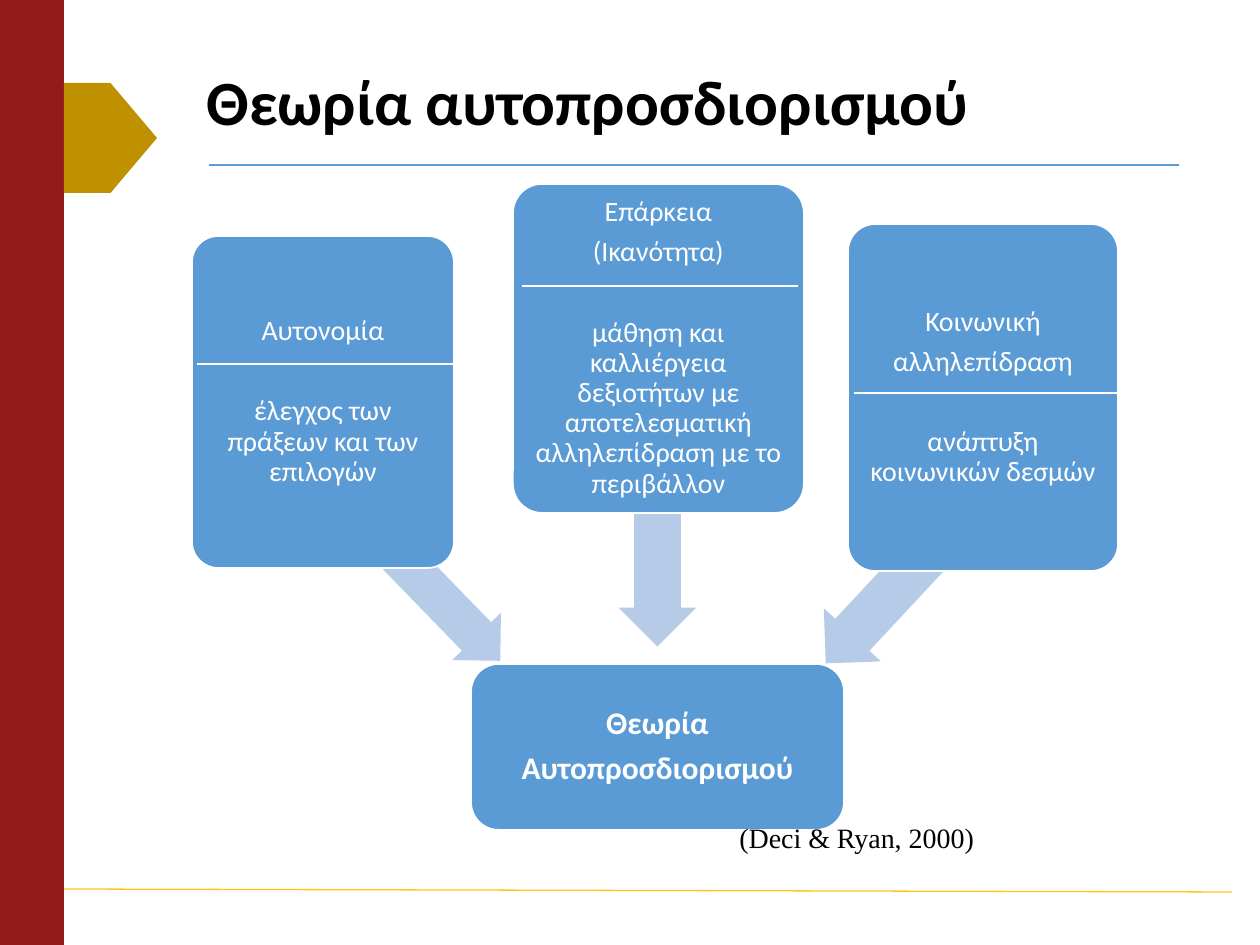
from dataclasses import dataclass

from lxml import etree
from pptx import Presentation, util as u
from pptx.dml.color import RGBColor
from pptx.enum import shapes, text
from pptx.oxml.ns import qn

EMU_PER_PX = 914400 / 126
COLORS = {
    "band": "931B1B", "tab": "BF9000", "blue": "5B9BD5", "arrow": "B5CBE7",
    "gold": "FFC61A", "white": "FFFFFF", "black": "000000",
}
Box = tuple[int, int, int, int]


@dataclass(frozen=True)
class Need:
    box: Box
    heading: tuple[str, ...]
    meaning: str
    arrow: Box
    rotation: float
    divider: tuple[int, int, int]  # x from, x to, y


NEEDS = [
    Need((192, 236, 262, 332), ("Αυτονομία",),
         "έλεγχος των πράξεων και των επιλογών",
         (328, 554, 203, 68), 225.8, (197, 473, 364)),
    Need((513, 184, 291, 329), ("Επάρκεια", "(Ικανότητα)"),
         "μάθηση και καλλιέργεια δεξιοτήτων με αποτελεσματική "
         "αλληλεπίδραση με το περιβάλλον",
         (509, 459, 297, 78), 270, (522, 798, 286)),
    Need((848, 224, 270, 347), ("Κοινωνική", "αλληλεπίδραση"),
         "ανάπτυξη κοινωνικών δεσμών",
         (770, 496, 351, 78), 313, (854, 1129, 393)),
]


def px(length: int) -> u.Emu:
    return u.Emu(round(length * EMU_PER_PX))


def color(name: str) -> RGBColor:
    return RGBColor.from_string(COLORS[name])


def add_block(slide, kind, box: Box, fill: str, outlined: bool = False):
    block = slide.shapes.add_shape(kind, *map(px, box))
    block.shadow.inherit = False
    block.fill.solid()
    block.fill.fore_color.rgb = color(fill)
    if outlined:
        block.line.color.rgb = color("white")
        block.line.width = u.Pt(1)
    else:
        block.line.fill.background()
    return block


def add_line(slide, start: tuple[int, int], end: tuple[int, int],
             tint: str, width: float) -> None:
    line = slide.shapes.add_connector(
        shapes.MSO_CONNECTOR.STRAIGHT, *map(px, start + end))
    line.line.color.rgb = color(tint)
    line.line.width = u.Pt(width)
    etree.SubElement(line._element.spPr, qn("a:effectLst"))


def write_centred(frame, lines: tuple[str, ...], size: int, inset: int,
                  bold: bool = False) -> None:
    frame.word_wrap = True
    frame.vertical_anchor = text.MSO_ANCHOR.MIDDLE
    frame.margin_left = frame.margin_right = px(inset)
    frame.margin_top = frame.margin_bottom = px(inset)
    for index, line in enumerate(lines):
        paragraph = frame.paragraphs[0] if index == 0 else frame.add_paragraph()
        paragraph.text = line
        paragraph.alignment = text.PP_ALIGN.CENTER
        paragraph.line_spacing = 0.9
        paragraph.space_after = u.Pt(size * 0.35)
        style_font(paragraph.font, "Calibri", size, "white", bold)


def style_font(font, name: str, size: int, tint: str, bold: bool = False) -> None:
    font.name = name
    font.size = u.Pt(size)
    font.bold = bold
    font.color.rgb = color(tint)


def add_label(slide, box: Box, words: str, name: str, size: int,
              bold: bool = False) -> None:
    frame = slide.shapes.add_textbox(*map(px, box)).text_frame
    frame.word_wrap = True
    frame.vertical_anchor = text.MSO_ANCHOR.MIDDLE
    paragraph = frame.paragraphs[0]
    paragraph.text = words
    paragraph.line_spacing = 0.9
    style_font(paragraph.font, name, size, "black", bold)


def add_need(slide, need: Need) -> None:
    """Draw one need: its arrow to the theory, its box and its text."""
    arrow = add_block(slide, shapes.MSO_SHAPE.LEFT_ARROW, need.arrow, "arrow")
    arrow.adjustments[0], arrow.adjustments[1] = 0.6, 0.5
    arrow.rotation = need.rotation
    card = add_block(slide, shapes.MSO_SHAPE.ROUNDED_RECTANGLE, need.box,
                     "blue", outlined=True)
    card.adjustments[0] = 0.1
    write_centred(card.text_frame, (*need.heading, need.meaning), 16, 4)
    card.text_frame.paragraphs[-1].space_before = u.Pt(23)


def main() -> None:
    prs = Presentation()
    prs.slide_width, prs.slide_height = px(1260), px(945)
    slide = prs.slides.add_slide(prs.slide_layouts[6])

    add_block(slide, shapes.MSO_SHAPE.RECTANGLE, (0, 0, 64, 945), "band")
    add_line(slide, (209, 165), (1179, 165), "blue", 0.75)
    add_line(slide, (64, 889), (1232, 892), "gold", 0.75)
    add_block(slide, shapes.MSO_SHAPE.PENTAGON, (64, 83, 93, 110), "tab")
    add_label(slide, (194, 52, 992, 106), "Θεωρία αυτοπροσδιορισμού",
              "Calibri", 36, bold=True)

    theory = add_block(slide, shapes.MSO_SHAPE.ROUNDED_RECTANGLE,
                       (471, 664, 373, 166), "blue", outlined=True)
    write_centred(theory.text_frame, ("Θεωρία", "Αυτοπροσδιορισμού"), 18, 1,
                  bold=True)
    for need in NEEDS:
        add_need(slide, need)
    for need in NEEDS:
        left, right, y = need.divider
        add_line(slide, (left, y), (right, y), "white", 1.5)

    add_label(slide, (727, 816, 306, 46), "(Deci & Ryan, 2000)",
              "Times New Roman", 16)
    prs.save("out.pptx")


if __name__ == "__main__":
    main()
